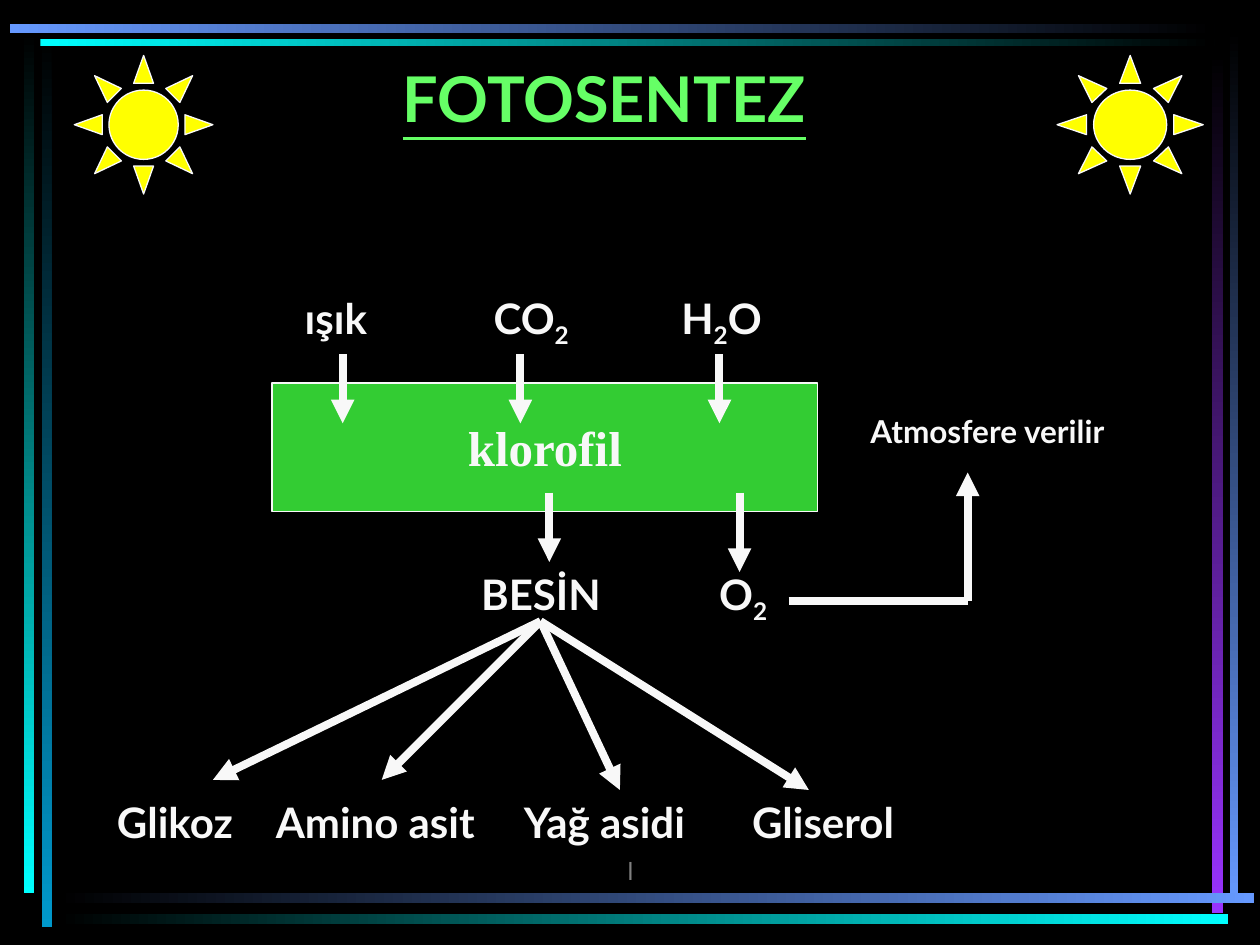
from itertools import groupby

from lxml.etree import SubElement
from pptx import Presentation
from pptx.dml.color import RGBColor
from pptx.enum.shapes import MSO_CONNECTOR, MSO_SHAPE
from pptx.enum.text import MSO_ANCHOR, MSO_AUTO_SIZE, PP_ALIGN
from pptx.oxml.ns import qn
from pptx.util import Inches, Pt

BLACK = RGBColor(0x00, 0x00, 0x00)
WHITE = RGBColor(0xF8, 0xF8, 0xF8)
GRAY = RGBColor(0x80, 0x80, 0x80)
CYAN = RGBColor(0x00, 0xFF, 0xFF)
TEAL = RGBColor(0x00, 0x99, 0xCC)
BLUE = RGBColor(0x66, 0x99, 0xFF)
PURPLE = RGBColor(0x99, 0x33, 0xFF)
YELLOW = RGBColor(0xFF, 0xFF, 0x00)
GREEN = RGBColor(0x33, 0xCC, 0x33)
LIGHT_GREEN = RGBColor(0x66, 0xFF, 0x66)


def write_text(shape, text, size=24, font="Lato", color=WHITE, bold=True,
               underline=False, align=PP_ALIGN.LEFT, anchor=MSO_ANCHOR.TOP, wrap=True):
    """Write one paragraph; digits become subscripts."""
    frame = shape.text_frame
    frame.word_wrap = wrap
    frame.vertical_anchor = anchor
    paragraph = frame.paragraphs[0]
    paragraph.alignment = align
    for is_digit, letters in groupby(text, str.isdigit):
        run = paragraph.add_run()
        run.text = "".join(letters)
        run.font.size = Pt(size)
        run.font.name = font
        run.font.bold = bold
        run.font.underline = underline
        run.font.color.rgb = color
        if is_digit:
            run.font._element.set("baseline", "-25000")


def add_line(start, end, arrow=True):
    connector = slide.shapes.add_connector(
        MSO_CONNECTOR.STRAIGHT, *[Inches(value) for value in (*start, *end)])
    connector.line.color.rgb = WHITE
    connector.line.width = Pt(4.5)
    if arrow:
        SubElement(connector.line._get_or_add_ln(), qn("a:tailEnd"), type="triangle")
    SubElement(connector._element.spPr, qn("a:effectLst"))
    return connector


presentation = Presentation()
presentation.slide_width = Inches(10)
presentation.slide_height = Inches(7.5)
slide = presentation.slides.add_slide(presentation.slide_layouts[5])
slide.background.fill.solid()
slide.background.fill.fore_color.rgb = BLACK

# Gradient bars of the frame: box, first colour, last colour
bars = [
    (0.33, 0.28, 0.08, 7.08, BLACK, TEAL),
    (0.19, 0.25, 0.08, 6.84, BLACK, CYAN),
    (9.76, 0.24, 0.07, 6.93, BLACK, BLUE),
    (9.62, 0.42, 0.09, 6.83, BLACK, PURPLE),
    (0.45, 7.09, 9.5, 0.08, BLACK, BLUE),
    (0.45, 7.25, 9.3, 0.08, BLACK, CYAN),
    (0.32, 0.31, 9.32, 0.06, CYAN, BLACK),
    (0.08, 0.19, 9.56, 0.07, BLUE, BLACK),
]
for left, top, width, height, first, last in bars:
    bar = slide.shapes.add_shape(MSO_SHAPE.RECTANGLE, Inches(left), Inches(top),
                                 Inches(width), Inches(height))
    bar.shadow.inherit = False
    bar.line.fill.background()
    bar.fill.gradient()
    bar.fill.gradient_angle = 270 if height > width else 0
    for stop, color in zip(bar.fill.gradient_stops, (first, last)):
        stop.color.rgb = color

# Title
title = slide.shapes.title
title.left, title.top = Inches(0.42), Inches(0.42)
title.width, title.height = Inches(8.75), Inches(0.92)
write_text(title, "FOTOSENTEZ", size=36, color=LIGHT_GREEN, underline=True,
           align=PP_ALIGN.CENTER)

# Footer mark
footer = slide.shapes.add_textbox(Inches(3.42), Inches(6.58), Inches(3.17), Inches(0.5))
write_text(footer, "l", size=14, color=GRAY, bold=False, align=PP_ALIGN.CENTER,
           anchor=MSO_ANCHOR.BOTTOM)

# Suns and chlorophyll block
filled_shapes = [
    (MSO_SHAPE.SUN, 0.59, 0.44, 1.1, 1.1, YELLOW),
    (MSO_SHAPE.SUN, 8.39, 0.44, 1.16, 1.1, YELLOW),
    (MSO_SHAPE.RECTANGLE, 2.16, 3.04, 4.33, 1.02, GREEN),
]
for kind, left, top, width, height, color in filled_shapes:
    shape = slide.shapes.add_shape(kind, Inches(left), Inches(top),
                                   Inches(width), Inches(height))
    shape.shadow.inherit = False
    shape.fill.solid()
    shape.fill.fore_color.rgb = color
    shape.line.color.rgb = WHITE
    shape.line.width = Pt(0.75)
chlorophyll = shape
write_text(chlorophyll, "klorofil", size=28, font="Times New Roman",
           align=PP_ALIGN.CENTER, anchor=MSO_ANCHOR.MIDDLE, wrap=False)

# Labels: inputs, outputs, food products
input_top, output_top, product_top = 2.27, 4.46, 6.27
labels = [
    ("ışık", 2.32, input_top, 1.31, 24),
    ("CO2", 3.82, input_top, 1.43, 24),
    ("H2O", 5.31, input_top, 1.47, 24),
    ("BESİN", 3.72, output_top, 1.28, 24),
    ("O2", 5.61, output_top, 0.6, 24),
    ("Atmosfere verilir", 6.81, 3.22, 2.31, 18),
    ("Glikoz", 0.83, product_top, 1.42, 24),
    ("Amino asit", 2.09, product_top, 2.28, 24),
    ("Yağ asidi", 4.06, product_top, 1.97, 24),
    ("Gliserol", 5.87, product_top, 1.65, 24),
]
boxes = {}
for text, left, top, width, size in labels:
    box = slide.shapes.add_textbox(Inches(left), Inches(top), Inches(width),
                                   Inches(0.5 if size == 24 else 0.4))
    write_text(box, text, size=size)
    box.text_frame.auto_size = MSO_AUTO_SIZE.SHAPE_TO_FIT_TEXT
    boxes[text] = box

# Arrows into and out of the chlorophyll block
for x in (2.72, 4.13, 5.71):
    add_line((x, 2.81), (x, 3.36))
food_arrow = add_line((4.36, 3.91), (4.36, output_top))
food_arrow.end_connect(boxes["BESİN"], 0)
add_line((5.87, 3.91), (5.87, 4.54))

# Oxygen path to the atmosphere
add_line((6.26, 4.77), (7.68, 4.77), arrow=False)
add_line((7.68, 4.77), (7.68, 3.75))

# Arrows from food to its products
for end in ((1.69, 6.19), (6.42, 6.27), (3.03, 6.19), (4.92, 6.27)):
    add_line((4.29, 4.93), end)

presentation.save("out.pptx")
